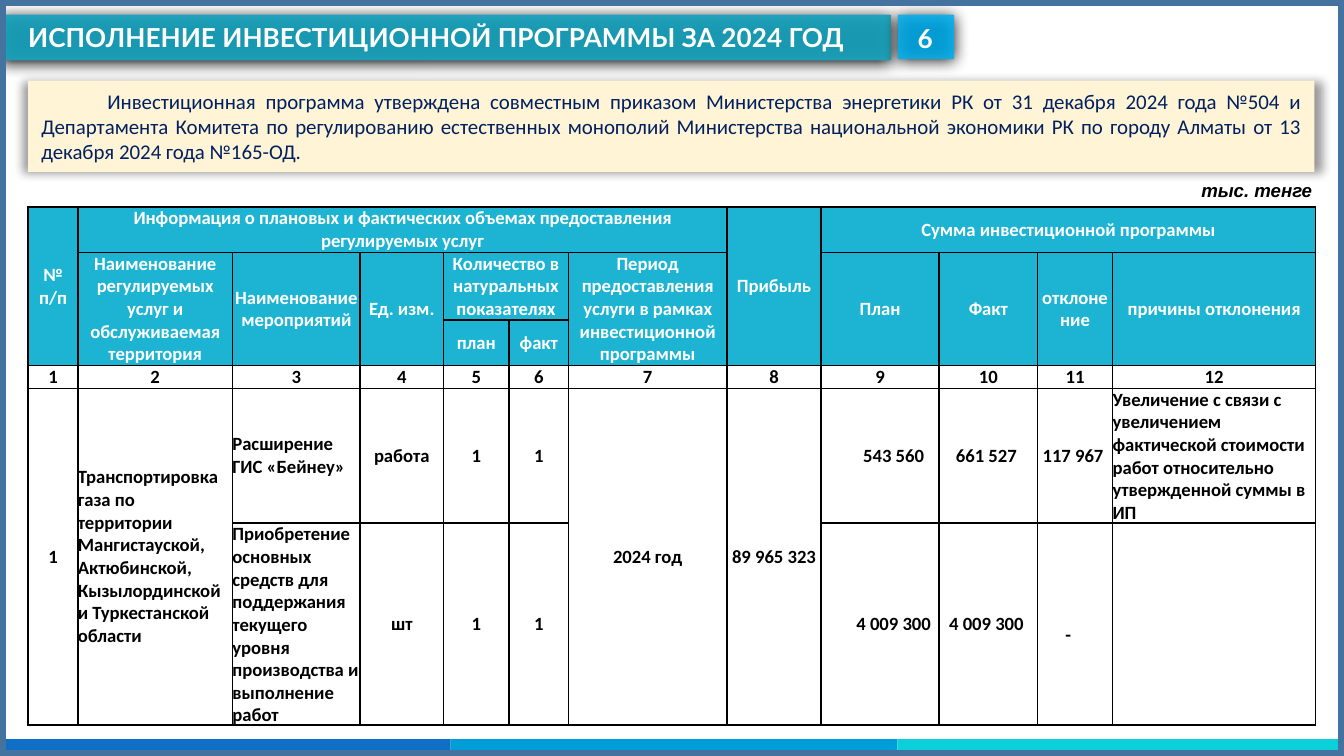
from lxml import etree
from pptx import Presentation
from pptx import util as u
from pptx.dml.color import RGBColor
from pptx.enum import shapes, text
from pptx.oxml import parse_xml
from pptx.oxml.ns import nsdecls, qn

LEFT, MID = text.PP_ALIGN.LEFT, text.PP_ALIGN.CENTER
WHITE, BLACK, HEAD = "FFFFFF", "000000", "1CB4D2"
WIDE = 10
HIGH = WIDE * 9 / 16
COLS = [0.37, 1.15, 0.95, 0.62, 0.49, 0.44, 1.18, 0.7, 0.88, 0.73, 0.56, 1.51]
ROWS = [0.34, 0.5, 0.34, 0.17, 1.0, 1.5]
SUM_COL, GAP_COL = 8, 10

# row, column, rows spanned, columns spanned, wording
HEADS = [
    (0, 0, 3, 1, "№ п/п"),
    (0, 1, 1, 6, "Информация о плановых и фактических объемах предоставления регулируемых услуг"),
    (0, 7, 3, 1, "Прибыль"),
    (0, 8, 1, 4, "Сумма инвестиционной программы"),
    (1, 1, 2, 1, "Наименование регулируемых услуг и обслуживаемая территория"),
    (1, 2, 2, 1, "Наименование мероприятий"),
    (1, 3, 2, 1, "Ед. изм."),
    (1, 4, 1, 2, "Количество в натуральных показателях"),
    (1, 6, 2, 1, "Период предоставления услуги в рамках инвестиционной программы"),
    (1, 8, 2, 1, "План"),
    (1, 9, 2, 1, "Факт"),
    (1, 10, 2, 1, "отклонение"),
    (1, 11, 2, 1, "причины отклонения"),
    (2, 4, 1, 1, "план"),
    (2, 5, 1, 1, "факт"),
]
BODY = [
    ["1", "Транспортировка газа по территории Мангистауской, Актюбинской, "
     "Кызылординской и Туркестанской области",
     "Расширение ГИС «Бейнеу»", "работа", "1", "1", "2024 год", "89 965 323",
     "543 560", "661 527", "117 967",
     "Увеличение с связи с увеличением фактической стоимости работ "
     "относительно утвержденной суммы в ИП"],
    ["", "", "Приобретение основных средств для поддержания текущего уровня "
     "производства и выполнение работ",
     "шт", "1", "1", "", "", "4 009 300", "4 009 300", "-", ""],
]
JOINED = (0, 1, 6, 7)
PROSE = (1, 2, 11)


def tint(code):
    return RGBColor.from_string(code)


def write(frame, words, size, color, font, align=LEFT, bold=True, slant=False):
    para = frame.paragraphs[0]
    para.alignment = align
    run = para.add_run()
    run.text = words
    run.font.size, run.font.name = u.Pt(size), font
    run.font.bold, run.font.italic = bold, slant
    run.font.color.rgb = tint(color)
    return para


def panel(slide, box, fill, kind=shapes.MSO_SHAPE.RECTANGLE):
    shape = slide.shapes.add_shape(kind, *map(u.Inches, box))
    shape.fill.solid()
    shape.fill.fore_color.rgb = tint(fill)
    shape.line.fill.background()
    shape.shadow.inherit = False
    return shape


def shade(shape, alpha, blur, dist=0, angle=0, scale=100):
    """Give the shape an outer black shadow, widened by scale."""
    glow = shape.element.spPr.find(qn("a:effectLst"))
    glow.append(parse_xml(
        f'<a:outerShdw {nsdecls("a")} blurRad="{u.Pt(blur)}" dist="{u.Pt(dist)}" '
        f'dir="{angle * 60000}" sx="{scale * 1000}" algn="ctr" rotWithShape="0">'
        f'<a:srgbClr val="{BLACK}"><a:alpha val="{alpha * 1000}"/></a:srgbClr></a:outerShdw>'))


def plate(slide, box, fill, alpha):
    """Draw a slightly see-through header bar."""
    bar = panel(slide, box, fill, shapes.MSO_SHAPE.ROUNDED_RECTANGLE)
    bar.adjustments[0] = 0.026
    color = bar.element.spPr.find(".//" + qn("a:srgbClr"))
    etree.SubElement(color, qn("a:alpha")).set("val", str(alpha * 1000))
    shade(bar, 100, 8.5, 1, 90)


def place(shape, box):
    shape.left, shape.top, shape.width, shape.height = map(u.Inches, box)
    frame = shape.text_frame
    frame.word_wrap = True
    frame.auto_size = text.MSO_AUTO_SIZE.SHAPE_TO_FIT_TEXT
    frame.vertical_anchor = text.MSO_ANCHOR.TOP
    return frame


def label(slide, box):
    return place(slide.shapes.add_textbox(0, 0, 0, 0), box)


def stripe(slide, x, y, w, h):
    for i, fill in enumerate(("0F6FC6", "009DD9", "0BD0D9")):
        panel(slide, (x + i * w / 3, y, w / 3, h), fill)


def header(slide, x, y, w, h):
    gap, side = 0.05, 0.42
    plate(slide, (x, y, w, h), "1AA4BE", 93)
    title = slide.shapes.title
    title.element.getparent().append(title.element)
    frame = place(title, (x + 0.11, y, w - 0.22, h))
    write(frame, "ИСПОЛНЕНИЕ ИНВЕСТИЦИОННОЙ ПРОГРАММЫ ЗА 2024 ГОД", 14, WHITE, "Lato")
    plate(slide, (x + w + gap, y, side, h - 0.01), "00B0F0", 86)
    frame = label(slide, (x + w + 2 * gap, y + 0.01, side - 0.04, h))
    write(frame, "6", 14, WHITE, "Lato")


def border(slide, *box):
    rim = panel(slide, box, WHITE)
    rim.fill.background()
    rim.line.color.rgb = tint("43739E")
    rim.line.width = u.Pt(6)


def intro(slide, *box):
    card = panel(slide, box, "FFF4D5")
    shade(card, 40, 5, scale=101)
    frame = place(card, box)
    frame.vertical_anchor = text.MSO_ANCHOR.MIDDLE
    para = write(
        frame, "Инвестиционная программа утверждена совместным приказом Министерства "
        "энергетики РК от 31 декабря 2024 года №504 и Департамента Комитета по "
        "регулированию естественных монополий Министерства национальной экономики РК "
        "по городу Алматы от 13 декабря 2024 года №165-ОД.",
        11.2, "002060", "Calibri", text.PP_ALIGN.JUSTIFY, bold=False)
    para._p.get_or_add_pPr().set("indent", str(u.Inches(0.49)))


def edge(cell):
    """Rule all four sides of the cell."""
    for side in ("lnL", "lnR", "lnT", "lnB"):
        cell._tc.get_or_add_tcPr().append(parse_xml(
            f'<a:{side} {nsdecls("a")} w="{u.Pt(1)}"><a:solidFill>'
            f'<a:srgbClr val="{BLACK}"/></a:solidFill></a:{side}>'))


def fill_in(cell, words, color, align=MID):
    if words:
        write(cell.text_frame, words, 10, color, "Calibri", align)


def table(slide, x, y):
    box = map(u.Inches, (x, y, sum(COLS), sum(ROWS)))
    grid = slide.shapes.add_table(len(ROWS), len(COLS), *box).table
    grid.first_row = grid.horz_banding = False
    for col, width in zip(grid.columns, COLS):
        col.width = u.Inches(width)
    for r, height in enumerate(ROWS):
        grid.rows[r].height = u.Inches(height)
        for cell in grid.rows[r].cells:
            edge(cell)
            cell.margin_left = cell.margin_right = cell.margin_top = cell.margin_bottom = 0
            cell.vertical_anchor = text.MSO_ANCHOR.BOTTOM if r == 3 else text.MSO_ANCHOR.MIDDLE
            if r < 3:
                cell.fill.solid()
                cell.fill.fore_color.rgb = tint(HEAD)
            else:
                cell.fill.background()
    for r, c, down, over, words in HEADS:
        if down * over > 1:
            grid.cell(r, c).merge(grid.cell(r + down - 1, c + over - 1))
        fill_in(grid.cell(r, c), words, WHITE)
    for c in range(len(COLS)):
        fill_in(grid.cell(3, c), str(c + 1), BLACK)
    for c in JOINED:
        grid.cell(4, c).merge(grid.cell(5, c))
    for r, row in enumerate(BODY, 4):
        for c, words in enumerate(row):
            fill_in(grid.cell(r, c), words, BLACK, LEFT if c in PROSE else MID)
        grid.cell(r, SUM_COL).margin_left = u.Inches(0.2)
        for c in (SUM_COL + 1, GAP_COL):
            grid.cell(r, c).margin_right = u.Inches(0.03)
    dash = grid.cell(5, GAP_COL)
    dash.margin_top, dash.margin_right = u.Inches(0.17), u.Inches(0.1)


def main():
    deck = Presentation()
    deck.slide_width, deck.slide_height = u.Inches(WIDE), u.Inches(HIGH)
    slide = deck.slides.add_slide(deck.slide_layouts[5])
    stripe(slide, 0.03, 5.5, 9.97, 0.09)
    header(slide, 0, 0.11, 6.63, 0.34)
    border(slide, 0, 0, WIDE, HIGH)
    intro(slide, 0.21, 0.6, 9.57, 0.68)
    table(slide, 0.21, 1.54)
    write(label(slide, (8.84, 1.28, 1.05, 0.27)), "тыс. тенге", 10, BLACK, "Arial", slant=True)
    deck.save("out.pptx")


if __name__ == "__main__":
    main()
